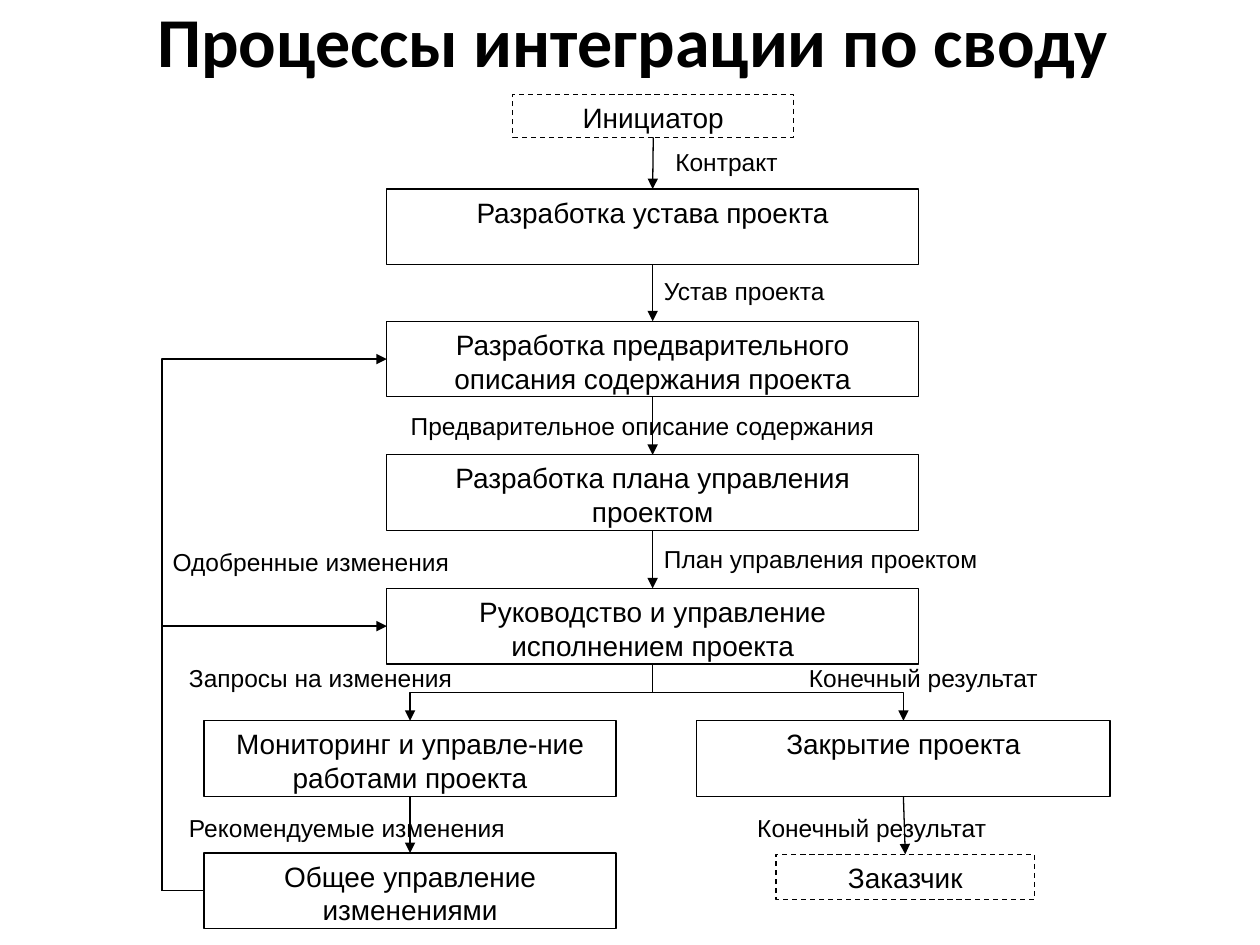
from pptx import Presentation
from pptx.dml.color import RGBColor
from pptx.enum.dml import MSO_LINE
from pptx.enum.shapes import MSO_CONNECTOR, MSO_SHAPE
from pptx.enum.text import MSO_ANCHOR, MSO_AUTO_SIZE, PP_ALIGN
from pptx.oxml.ns import qn
from pptx.util import Inches, Pt
from lxml.etree import SubElement

THEME = {
    "ink": RGBColor(0, 0, 0), "paper": RGBColor(255, 255, 255), "line": Pt(0.75),
    "head": ("Calibri", 40), "box": ("Arial", 16), "label": ("Arial", 14),
}
TITLE = "Процессы интеграции по своду"
MAIN, LEFT, RIGHT = (3.07, 4.22), (1.62, 3.27), (5.53, 3.28)
TOP, STEP, TALL = 1.5, 1.055, 0.6
STEPS = [
    ("charter", "Разработка устава проекта", MAIN, 0),
    ("scope", "Разработка предварительного описания содержания проекта", MAIN, 1),
    ("plan", "Разработка плана управления проектом", MAIN, 2),
    ("lead", "Руководство и управление исполнением проекта", MAIN, 3),
    ("watch", "Мониторинг и управле-ние работами проекта", LEFT, 4),
    ("close", "Закрытие проекта", RIGHT, 4),
    ("change", "Общее управление изменениями", LEFT, 5),
]
ACTORS = [
    ("sponsor", "Инициатор", (4.07, 0.75, 2.23, 0.34)),
    ("client", "Заказчик", (6.16, 6.78, 2.05, 0.36)),
]
FLOWS = [("sponsor", "charter"), ("charter", "scope"), ("scope", "plan"),
         ("plan", "lead"), ("watch", "change"), ("close", "client")]
FORKS = [("lead", "watch"), ("lead", "close")]
LOOPS = [("change", "lead"), ("change", "scope")]
LABELS = [
    ("Контракт", 5.36, 1.17, 1.29, True),
    ("Устав проекта", 5.27, 2.19, 1.64, True),
    ("План управления проектом", 5.27, 4.32, 3.1, True),
    ("Предварительное описание содержания", 3.26, 3.26, 4.47, False),
    ("Одобренные изменения", 1.37, 4.34, 3.1, False),
    ("Запросы на изменения", 1.5, 5.26, 3.1, False),
    ("Конечный результат", 6.42, 5.26, 2.73, False),
    ("Рекомендуемые изменения", 1.5, 6.45, 3.1, False),
    ("Конечный результат", 6.01, 6.45, 2.31, False),
]

deck = Presentation()
deck.slide_width, deck.slide_height = Inches(10), Inches(7.5)
slide = deck.slides.add_slide(deck.slide_layouts[6])
shapes = slide.shapes


def write(shape, text, style, align, bold=False):
    frame = shape.text_frame
    frame.text = text
    frame.word_wrap = True
    frame.vertical_anchor = MSO_ANCHOR.TOP
    para = frame.paragraphs[0]
    para.alignment = align
    font = para.runs[0].font
    name, size = THEME[style]
    font.name, font.size, font.bold = name, Pt(size), bold
    font.color.rgb = THEME["ink"]
    return frame


def fill(shape):
    shape.fill.solid()
    shape.fill.fore_color.rgb = THEME["paper"]


def stroke(line):
    line.color.rgb = THEME["ink"]
    line.width = THEME["line"]


def box(text, area, dash=False):
    shape = shapes.add_shape(MSO_SHAPE.RECTANGLE, *map(Inches, area))
    shape.shadow.inherit = False
    fill(shape)
    stroke(shape.line)
    if dash:
        shape.line.dash_style = MSO_LINE.DASH
    write(shape, text, "box", PP_ALIGN.CENTER)
    return shape


def link(kind, start, out, end, into):
    line = shapes.add_connector(kind, 0, 0, 0, 0)
    line.begin_connect(start, out)
    line.end_connect(end, into)
    stroke(line.line)
    props = line._element.spPr
    SubElement(props.find(qn("a:ln")), qn("a:tailEnd"), type="triangle")
    SubElement(props, qn("a:effectLst"))
    return line


def bend(line, ratio):
    guides = line._element.spPr.find(qn("a:prstGeom")).get_or_add_avLst()
    SubElement(guides, qn("a:gd"), name="adj1", fmla=f"val {round(ratio * 100000)}")


def turn(line):
    left, top, wide, high = line.left, line.top, line.width, line.height
    right = line.end_x > line.begin_x
    line.left, line.top = left + (wide - high) // 2, top + (high - wide) // 2
    line.width, line.height = high, wide
    frame = line._element.spPr.find(qn("a:xfrm"))
    frame.set("rot", str((270 if right else 90) * 60000))
    frame.set("flipH", "1" if right else "0")


title = shapes.add_textbox(*map(Inches, (0.58, -0.07, 8.88, 0.77)))
frame = write(title, TITLE, "head", PP_ALIGN.CENTER, True)
frame.auto_size = MSO_AUTO_SIZE.SHAPE_TO_FIT_TEXT

nodes = {key: box(text, area, True) for key, text, area in ACTORS}
for key, text, (left, wide), row in STEPS:
    nodes[key] = box(text, (left, round(TOP + row * STEP, 2), wide, TALL))

for start, end in FLOWS:
    link(MSO_CONNECTOR.STRAIGHT, nodes[start], 2, nodes[end], 0)
for start, end in FORKS:
    line = link(MSO_CONNECTOR.ELBOW, nodes[start], 2, nodes[end], 0)
    turn(line)
    bend(line, 0.5)
for start, end in LOOPS:
    bend(link(MSO_CONNECTOR.ELBOW, nodes[start], 1, nodes[end], 1), -0.23)

for text, left, top, wide, solid in LABELS:
    label = shapes.add_textbox(*map(Inches, (left, top, wide, 0.24)))
    if solid:
        fill(label)
    frame = write(label, text, "label", PP_ALIGN.LEFT)
    frame.margin_left = frame.margin_right = frame.margin_top = frame.margin_bottom = 0

deck.save("out.pptx")
